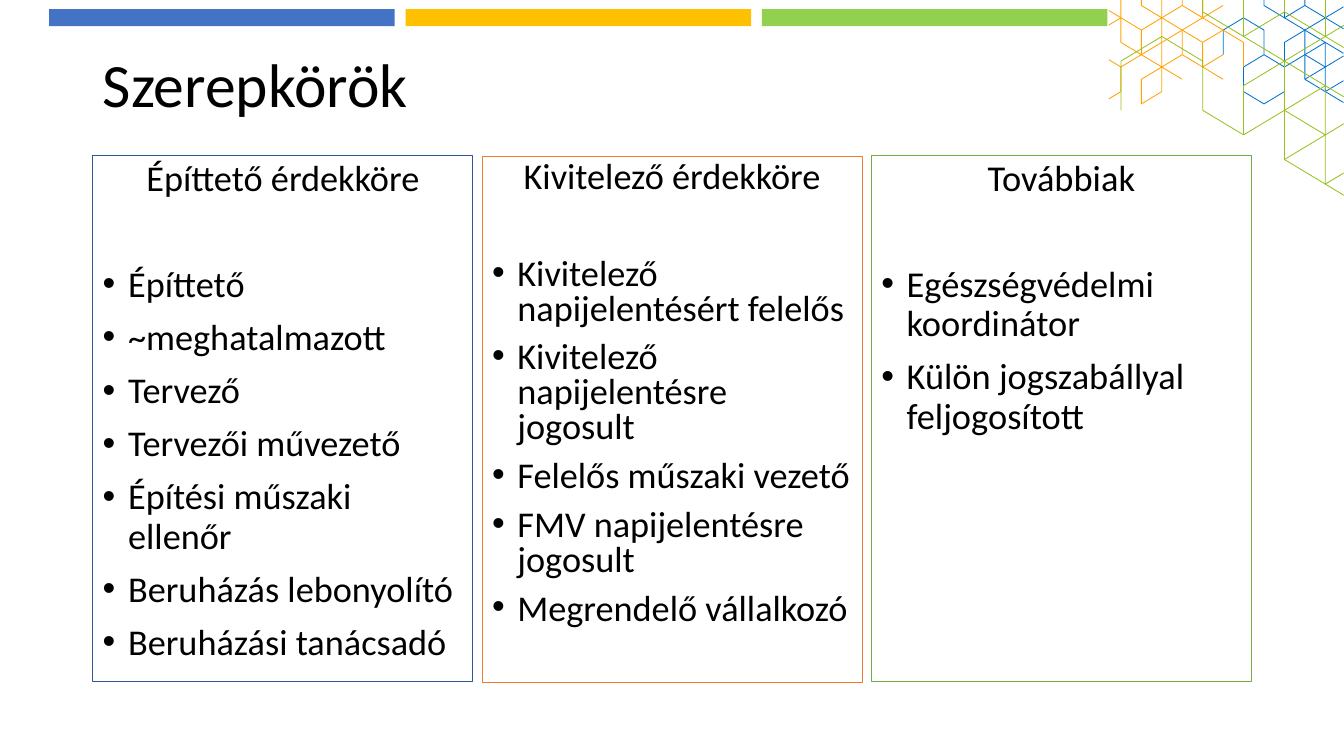
from lxml import etree
from pptx import Presentation
from pptx import util as u
from pptx.dml.color import RGBColor
from pptx.enum import shapes, text
from pptx.oxml.ns import qn

COLORS = {
    "blue bar": "4472C4", "yellow bar": "FFC000", "green bar": "92D050",
    "blue mesh": "0072CE", "orange mesh": "FFA300", "green mesh": "96C11E",
    "blue frame": "2F5597", "orange frame": "ED7D31", "green frame": "70AD47",
    "text": "000000",
}
TOP, LEFT, RIGHT = -0.47, -0.59, 10.89
BIG_TOP, BIG_RIGHT = -0.49, 5.45

ORANGE_LINES = [
    [(0, TOP), (0, 3), (1, 4), (0, 5), (0, 7), (LEFT, 7.59)],
    [(LEFT, 0.41), (0, 1), (1, 2), (2, 1), (1, 0), (1, TOP)],
    [(LEFT, 1.59), (0, 1)],
    [(LEFT, 4.41), (0, 5)],
    [(2, TOP), (2, 7), (1, 8), (1, 6), (2, 5), (1, 4), (1, 2)],
    [(3, TOP), (3, 0), (4, 1), (5, 2), (6, 3), (6, 5)],
    [(4, TOP), (4, 1), (5, 0)],
    [(1, 4), (2, 3), (3, 2), (4, 1)],
    [(3, 0), (2, 1), (3, 2), (4, 3), (5, 2)],
    [(3, 2), (3, 4), (2, 5), (3, 6)],
    [(4, 3), (4, 5), (5, 4)],
    [(3, 4), (4, 5), (5, 6)],
]
BLUE_LINES = [
    [(RIGHT, 7.89), (10, 7), (9, 6), (9, 2), (8, 1), (7, 0), (7, TOP)],
    [(9, 4), (8, 5), (7, 4), (6, 5), (6, 7), (7, 8), (8, 7)],
    [(7, 4), (7, 2), (6, 1), (5, 2), (5, 4)],
    [(8, 5), (8, 3), (9, 2), (10, 1), (RIGHT, 0.11)],
    [(8, TOP), (8, 1), (9, 0), (9, TOP)],
    [(9, 0), (10, 1), (RIGHT, 1.89)],
    [(10, TOP), (10, 1)],
    [(9, 2), (10, 3), (RIGHT, 3.89)],
    [(9, 4), (10, 3), (10, 7), (RIGHT, 6.11)],
    [(9, 4), (10, 5), (RIGHT, 4.11)],
    [(9, 6), (10, 5)],
]
GREEN_LINES = [
    [(0, 4), (0, 2), (1, 1), (2, 2), (2, 4), (3, 5), (4, 4), (4, 6), (5, 7), (BIG_RIGHT, 7.45)],
    [(2, BIG_TOP), (2, 0), (3, 1), (4, 2), (3, 3), (3, 5)],
    [(3, BIG_TOP), (3, 1), (4, 0), (4, BIG_TOP)],
    [(4, 0), (5, 1), (BIG_RIGHT, 1.45)],
    [(5, BIG_TOP), (5, 1)],
    [(BIG_RIGHT, 0.55), (5, 1), (4, 2), (5, 3), (BIG_RIGHT, 3.45)],
    [(4, 2), (4, 4), (5, 3), (5, 7), (BIG_RIGHT, 6.55)],
    [(4, 4), (5, 5), (BIG_RIGHT, 4.55)],
    [(4, 6), (5, 5)],
]
ROLE_COLUMNS = [
    ("Építtető érdekköre", "blue frame", 3.91, 25.9, 0.9, 47.5,
     ["Építtető", "~meghatalmazott", "Tervező", "Tervezői művezető",
      "Építési műszaki ellenőr", "Beruházás lebonyolító", "Beruházási tanácsadó"]),
    ("Kivitelező érdekköre", "orange frame", 3.94, 25.9, 0.8, 44.5,
     ["Kivitelező napijelentésért felelős", "Kivitelező napijelentésre jogosult",
      "Felelős műszaki vezető", "FMV napijelentésre jogosult", "Megrendelő vállalkozó"]),
    ("Továbbiak", "green frame", 3.91, 26, 0.9, 47.5,
     ["Egészségvédelmi koordinátor", "Külön jogszabállyal feljogosított"]),
]


class RoleSlide:
    font = "Calibri"

    def __init__(self, presentation):
        self.slide = presentation.slides.add_slide(presentation.slide_layouts[6])

    def color(self, name):
        return RGBColor.from_string(COLORS[name])

    def bar(self, left, color):
        shape = self.slide.shapes.add_shape(
            shapes.MSO_SHAPE.RECTANGLE, u.Cm(left), u.Cm(0.23), u.Cm(8.71), u.Cm(0.43))
        shape.shadow.inherit = False
        shape.fill.solid()
        shape.fill.fore_color.rgb = self.color(color)
        shape.line.fill.background()

    def mesh(self, lines, color, top, step_x, step_y):
        def place(point):
            column, row = point
            return u.Cm(28.25 + column * step_x), u.Cm(top + row * step_y)

        builder = self.slide.shapes.build_freeform(*place(lines[0][0]))
        for line in lines:
            builder.move_to(*place(line[0]))
            builder.add_line_segments([place(point) for point in line[1:]], close=False)
        shape = builder.convert_to_shape()
        shape.shadow.inherit = False
        shape.fill.background()
        shape.line.color.rgb = self.color(color)
        shape.line.width = u.Pt(0.6)

    def style(self, paragraph, size, spacing, before=0):
        paragraph.line_spacing = spacing
        paragraph.space_before = u.Pt(before)
        paragraph.font.name = self.font
        paragraph.font.size = u.Pt(size)
        paragraph.font.color.rgb = self.color("text")

    def text_box(self, left, top, width, height):
        shape = self.slide.shapes.add_textbox(u.Cm(left), u.Cm(top), u.Cm(width), u.Cm(height))
        shape.text_frame.word_wrap = True
        return shape

    def title(self, wording):
        frame = self.text_box(2.34, 1.02, 29.21, 2.39).text_frame
        frame.vertical_anchor = text.MSO_ANCHOR.MIDDLE
        frame.text = wording
        self.style(frame.paragraphs[0], 44, 0.9)

    def bullet(self, paragraph):
        properties = paragraph._p.get_or_add_pPr()
        properties.set("marL", str(u.Cm(0.64)))
        properties.set("indent", str(-u.Cm(0.64)))
        etree.SubElement(properties, qn("a:buFont"), typeface="Arial")
        etree.SubElement(properties, qn("a:buChar"), char="•")

    def role_column(self, left, heading, color, top, size, spacing, gap, roles):
        shape = self.text_box(left, top, 9.58, 13.26)
        shape.line.color.rgb = self.color(color)
        shape.line.width = u.Pt(0.75)
        frame = shape.text_frame
        frame.text = heading
        frame.paragraphs[0].alignment = text.PP_ALIGN.CENTER
        self.style(frame.paragraphs[0], size, spacing)
        for index, role in enumerate(roles):
            paragraph = frame.add_paragraph()
            paragraph.text = role
            self.bullet(paragraph)
            self.style(paragraph, size, spacing, 10 if index else gap)


def main():
    presentation = Presentation()
    presentation.slide_width = u.Cm(33.87)
    presentation.slide_height = u.Cm(19.05)
    page = RoleSlide(presentation)
    for index, color in enumerate(["blue bar", "yellow bar", "green bar"]):
        page.bar(1.24 + index * 8.98, color)
    page.mesh(BLUE_LINES, "blue mesh", 0.14, 1.03 / 2, 0.31)
    page.mesh(ORANGE_LINES, "orange mesh", 0.14, 1.03 / 2, 0.31)
    page.mesh(GREEN_LINES, "green mesh", 0.3, 1.03, 0.62)
    page.title("Szerepkörök")
    for index, column in enumerate(ROLE_COLUMNS):
        page.role_column(2.34 + index * 9.81, *column)
    presentation.save("out.pptx")


if __name__ == "__main__":
    main()
